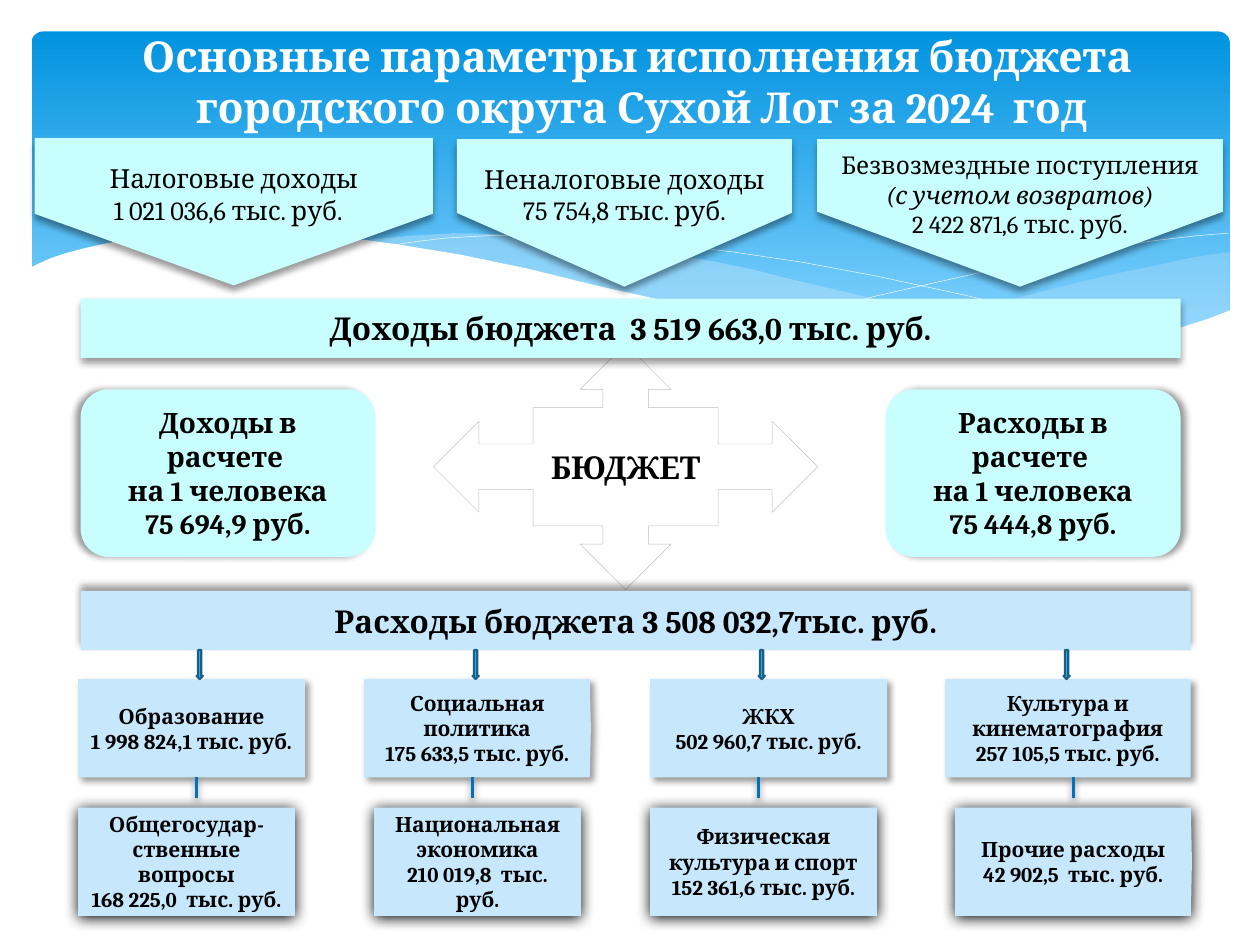
"""Build the slide with the main 2024 budget figures of the Sukhoi Log district."""
from lxml.etree import SubElement
from pptx import Presentation
from pptx.dml.color import RGBColor as Rgb
from pptx.enum.shapes import MSO_CONNECTOR as Connector, MSO_SHAPE as Shape
from pptx.enum.text import MSO_ANCHOR as Anchor, PP_ALIGN as Align
from pptx.oxml.ns import qn
from pptx.util import Inches, Pt

COLORS = {
    "white": "FFFFFF", "black": "000000", "aqua": "C8FEFD", "pale": "C6E7FC",
    "sky_top": "0293E0", "sky_bottom": "83D3FE", "arrow": "31B6FD",
    "arrow_edge": "195F84", "link": "0070C0", "faint": "BFBFBF",
}
COLORS = {name: Rgb.from_string(value) for name, value in COLORS.items()}


def set_shadow(shape, shadow=None):
    effects = SubElement(shape._element.spPr, qn("a:effectLst"))
    if shadow:
        opacity, blur, distance, angle = shadow
        outer = SubElement(effects, qn("a:outerShdw"), blurRad=str(Pt(blur)),
                           dist=str(Pt(distance)), dir=str(angle * 60000),
                           algn="ctr", rotWithShape="0")
        tint = SubElement(outer, qn("a:srgbClr"), val="000000")
        SubElement(tint, qn("a:alpha"), val=str(opacity * 1000))


def add_block(text, kind, frame, fill=None, line=None, line_width=1.25, shadow=None,
              adjust=None, size=12, bold=True, color="black", italic_row=None,
              inset=0.1, pointing_down=False):
    frame = [Inches(value) for value in frame]
    if kind is None:
        box = page.shapes.add_textbox(*frame)
    else:
        box = page.shapes.add_shape(kind, *frame)
        if adjust is not None:
            box.adjustments[0] = adjust
        box.fill.solid()
        box.fill.fore_color.rgb = COLORS[fill]
        if line:
            box.line.color.rgb = COLORS[line]
            box.line.width = Pt(line_width)
        else:
            box.line.fill.background()
        set_shadow(box, shadow)
    body = box.text_frame
    body.word_wrap = True
    body.vertical_anchor = Anchor.MIDDLE
    body.margin_left = body.margin_right = Inches(inset)
    if pointing_down:
        box.rotation = 90
        body._txBody.bodyPr.set("vert", "vert270")
    for row, words in enumerate(text.split("\n") if text else []):
        para = body.paragraphs[0] if row == 0 else body.add_paragraph()
        para.alignment = Align.CENTER
        span = para.add_run()
        span.text = words
        span.font.name = "Cambria"
        span.font.size = Pt(size)
        span.font.bold = bold
        span.font.italic = row == italic_row
        span.font.color.rgb = COLORS[color]
    return box


deck = Presentation()
deck.slide_width, deck.slide_height = Inches(10), Inches(7.5)
page = deck.slides.add_slide(deck.slide_layouts[6])

banner = add_block("", Shape.ROUNDED_RECTANGLE, (0.25, 0.25, 9.51, 2.7),
                   fill="sky_top", adjust=0.034)
banner.fill.gradient()
banner.fill.gradient_angle = 270
for stop, name, position in zip(banner.fill.gradient_stops, ("sky_top", "sky_bottom"), (0, 0.9)):
    stop.color.rgb = COLORS[name]
    stop.position = position

WAVES = [
    ("pale", 29, [(975, 200), (948, 204), (921, 210), (891, 216), (861, 223), (805, 237),
                  (753, 248), (706, 257), (661, 265), (691, 269), (719, 272), (745, 275),
                  (769, 277), (803, 278), (835, 277), (863, 275), (889, 272), (913, 267),
                  (935, 262), (949, 257), (963, 252), (976, 247), (976, 200)]),
    ("pale", 40, [(893, 273), (866, 269), (837, 265), (807, 260), (775, 254), (741, 247),
                  (706, 240), (668, 231), (629, 222), (598, 214), (569, 208), (541, 203),
                  (514, 198), (489, 194), (442, 189), (399, 186), (361, 185), (328, 187),
                  (286, 191), (323, 196), (362, 203), (404, 211), (449, 222), (491, 232),
                  (530, 240), (566, 248), (601, 255), (634, 261), (665, 266), (695, 270),
                  (722, 274), (748, 276), (785, 278), (828, 278), (867, 276), (893, 273)]),
    (None, None, [(309, 195), (328, 192), (353, 189), (387, 187), (416, 187), (450, 188),
                  (489, 190), (533, 194), (582, 200), (636, 208), (695, 219), (760, 233),
                  (795, 241), (831, 251), (869, 261), (907, 272)]),
    (None, None, [(613, 257), (653, 246), (695, 235), (748, 223), (806, 210), (866, 199),
                  (895, 194), (924, 190), (951, 187), (975, 185)]),
    ("white", 100, [(977, 246), (959, 253), (940, 259), (920, 265), (899, 269), (875, 273),
                    (850, 275), (809, 277), (778, 276), (744, 274), (708, 270), (668, 265),
                    (626, 258), (579, 250), (529, 239), (475, 227), (418, 213), (365, 202),
                    (316, 194), (271, 188), (230, 185), (193, 184), (161, 184), (132, 186),
                    (106, 189), (85, 193), (67, 197), (52, 201), (40, 205), (29, 210),
                    (23, 213), (23, 329), (977, 329)]),
]
for fill, opacity, points in WAVES:
    builder = page.shapes.build_freeform(*points[0], scale=Inches(0.01))
    builder.add_line_segments(points[1:], close=fill is not None)
    wave = builder.convert_to_shape()
    if fill:
        wave.fill.solid()
        wave.fill.fore_color.rgb = COLORS[fill]
        tint = wave._element.spPr.find(qn("a:solidFill"))[0]
        SubElement(tint, qn("a:alpha"), val=str(opacity * 1000))
        wave.line.fill.background()
    else:
        wave.fill.background()
        wave.line.color.rgb = COLORS["white"]
        wave.line.width = Pt(0.25)
    set_shadow(wave)

add_block("Основные параметры исполнения бюджета \nгородского округа Сухой Лог за 2024  год",
          None, (0.62, 0.29, 8.95, 0.7), size=24.3, color="white")
add_block("БЮДЖЕТ", Shape.QUAD_ARROW_CALLOUT, (3.44, 2.73, 3.05, 1.95),
          fill="white", line="faint", line_width=0.25, size=18)

TOTALS = [
    ("Доходы бюджета  3 519 663,0 тыс. руб.", 2.37, 8.73, "aqua", 90),
    ("Расходы бюджета 3 508 032,7тыс. руб.", 4.69, 8.81, "pale", 270),
]
for text, top, width, fill, angle in TOTALS:
    add_block(text, Shape.RECTANGLE, (0.64, top, width, 0.47), fill=fill,
              shadow=(40, 4, 3, angle), size=18)

INCOMES = [
    ("Налоговые доходы\n1 021 036,6 тыс. руб.  ", (1.27, 0.1, 1.17, 3.16), 0.485, 15, None),
    ("Неналоговые доходы\n75 754,8 тыс. руб.", (4.37, 0.36, 1.17, 2.66), 0.5, 15, None),
    ("Безвозмездные поступления\n (с учетом возвратов) \n2 422 871,6 тыс. руб.",
     (7.51, 0.08, 1.17, 3.22), 0.508, 14, 1),
]
for text, frame, adjust, size, italic_row in INCOMES:
    add_block(text, Shape.PENTAGON, frame, fill="aqua", shadow=(40, 4, 3, 90), adjust=adjust,
              size=size, bold=False, italic_row=italic_row, pointing_down=True)

UPPER_EXPENSES = [
    ("Образование\n1 998 824,1 тыс. руб.", 0.62, 1.8, 0),
    ("Социальная политика\n175 633,5 тыс. руб.", 2.89, 1.8, 0.012),
    ("ЖКХ\n502 960,7 тыс. руб.", 5.16, 1.88, 0),
    ("Культура и кинематография\n257 105,5 тыс. руб.", 7.5, 1.95, 0),
]
for text, left, width, adjust in UPPER_EXPENSES:
    add_block(text, Shape.PENTAGON, (left, 5.39, width, 0.78), fill="pale",
              shadow=(40, 4, 3, 45), adjust=adjust)

LOWER_EXPENSES = [
    ("Общегосудар-\nственные вопросы\n168 225,0  тыс. руб.", 0.62, 1.72, 0, 0.08),
    ("Национальная экономика\n210 019,8  тыс. руб.", 2.97, 1.64, 0, 0.1),
    ("Физическая культура и спорт\n152 361,6 тыс. руб.", 5.16, 1.8, 0, 0.1),
    ("Прочие расходы\n42 902,5  тыс. руб.", 7.58, 1.88, 0.01, 0.1),
]
for text, left, width, adjust, inset in LOWER_EXPENSES:
    add_block(text, Shape.PENTAGON, (left, 6.41, width, 0.86), fill="pale",
              shadow=(100, 8.5, 1, 90), adjust=adjust, inset=inset)

PER_PERSON = [
    ("Доходы в расчете \nна 1 человека\n75 694,9 руб.", 0.64, 180),
    ("Расходы в расчете \nна 1 человека\n75 444,8 руб.", 7.03, 0),
]
for text, left, angle in PER_PERSON:
    add_block(text, Shape.ROUNDED_RECTANGLE, (left, 3.09, 2.34, 1.33), fill="aqua",
              shadow=(40, 4, 3, angle), size=16)

for arrow_left, link_x in [(1.56, 1.56), (3.75, 3.75), (6.02, 6.02), (8.44, 8.52)]:
    add_block("", Shape.DOWN_ARROW, (arrow_left, 5.16, 0.05, 0.23),
              fill="arrow", line="arrow_edge")
    link = page.shapes.add_connector(Connector.STRAIGHT, Inches(link_x), Inches(6.17),
                                     Inches(link_x), Inches(6.33))
    link.line.color.rgb = COLORS["link"]
    link.line.width = Pt(2)
    set_shadow(link, (38, 4, 2, 90))

deck.save("out.pptx")
